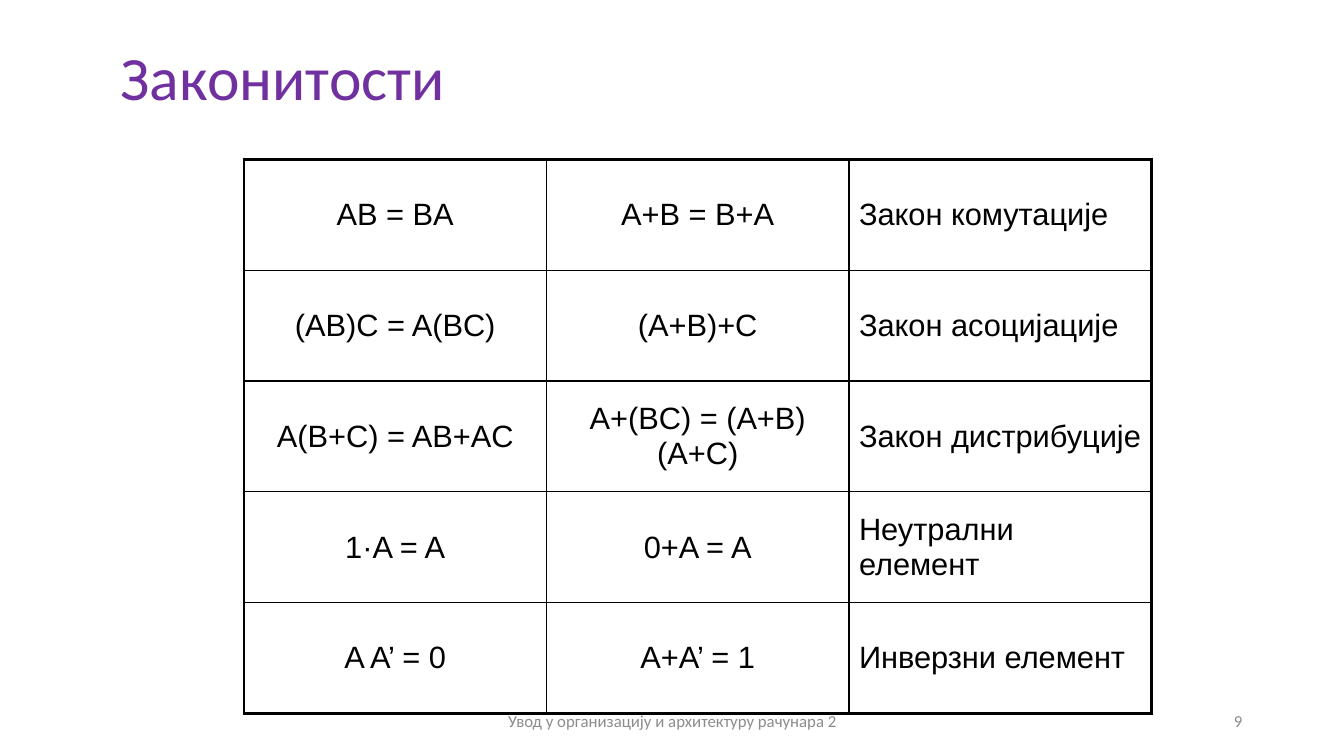
from lxml import etree
from pptx import Presentation
from pptx.dml.color import RGBColor
from pptx.enum.text import MSO_ANCHOR, PP_ALIGN
from pptx.oxml import parse_xml
from pptx.oxml.ns import qn
from pptx.util import Inches, Pt

DRAWING = "http://schemas.openxmlformats.org/drawingml/2006/main"
BLACK, PURPLE, GRAY = "000000", "7030A0", "8C8C8C"
THICK, THIN = 2.25, 1
LAWS = [
    ("AB = BA", "A+B = B+A", "Закон комутације"),
    ("(AB)C = A(BC)", "(A+B)+C", "Закон асоцијације"),
    ("A(B+C) = AB+AC", "A+(BC) = (A+B)(A+C)", "Закон дистрибуције"),
    ("1·A = A", "0+A = A", "Неутрални елемент"),
    ("A A’ = 0", "A+A’ = 1", "Инверзни елемент"),
]


def color(value):
    return RGBColor.from_string(value)


def write(frame, text, size, font="Calibri", fill=BLACK, align=PP_ALIGN.LEFT,
          line_spacing=None, space_before=None):
    frame.word_wrap = True
    para = frame.paragraphs[0]
    para.alignment = align
    para.line_spacing = line_spacing
    para.space_before = space_before
    span = para.add_run()
    span.text = text
    span.font.size = Pt(size)
    span.font.name = font
    span.font.color.rgb = color(fill)
    return span


def add_text(page, left, top, width, height, text, **style):
    box = page.shapes.add_textbox(Inches(left), Inches(top), Inches(width), Inches(height))
    box.text_frame.vertical_anchor = MSO_ANCHOR.MIDDLE
    return write(box.text_frame, text, **style)


def add_text_shadow(span):
    effects = parse_xml(
        f'<a:effectLst xmlns:a="{DRAWING}">'
        '<a:outerShdw blurRad="38100" dist="38100" dir="8100000" algn="tr">'
        '<a:srgbClr val="000000"><a:alpha val="40000"/></a:srgbClr>'
        '</a:outerShdw></a:effectLst>')
    span.font.color.rgb = color(PURPLE)
    fill = span.font._element.find(qn("a:solidFill"))
    fill.addnext(effects)


def set_borders(cell, widths):
    properties = cell._tc.get_or_add_tcPr()
    for index, (side, width) in enumerate(widths.items()):
        line = etree.Element(qn(f"a:ln{side}"), w=str(Pt(width)))
        fill = etree.SubElement(line, qn("a:solidFill"))
        etree.SubElement(fill, qn("a:srgbClr"), val=BLACK)
        properties.insert(index, line)


def add_laws_table(page, left, top, width, height):
    row_count, column_count = len(LAWS), len(LAWS[0])
    table = page.shapes.add_table(row_count, column_count, Inches(left), Inches(top),
                                  Inches(width), Inches(height)).table
    table.first_row = table.horz_banding = False
    for row, law in enumerate(LAWS):
        for column, text in enumerate(law):
            cell = table.cell(row, column)
            cell.fill.background()
            cell.vertical_anchor = MSO_ANCHOR.MIDDLE
            last_column = column == column_count - 1
            write(cell.text_frame, text, size=22, font="Arial", space_before=Pt(4.4),
                  align=PP_ALIGN.LEFT if last_column else PP_ALIGN.CENTER)
            # Thick frame outside, thin lines inside
            set_borders(cell, {
                "L": THICK if column == 0 else THIN,
                "R": THICK if last_column else THIN,
                "T": THICK if row == 0 else THIN,
                "B": THICK if row == row_count - 1 else THIN,
            })


def main():
    deck = Presentation()
    deck.slide_width, deck.slide_height = Inches(13.33), Inches(7.5)
    page = deck.slides.add_slide(deck.slide_layouts[6])

    # Title
    title = add_text(page, 1.1, 0.2, 11.22, 1.2, "Законитости", size=44,
                     fill=PURPLE, line_spacing=0.9)
    add_text_shadow(title)

    # Laws of the algebra
    add_laws_table(page, 2.42, 1.58, 9, 5.5)

    # Page number and footer
    add_text(page, 9.42, 6.95, 3, 0.4, "9", size=12, fill=GRAY, align=PP_ALIGN.RIGHT)
    add_text(page, 4.42, 6.95, 4.5, 0.4, "Увод у организацију и архитектуру рачунара 2",
             size=12, fill=GRAY, align=PP_ALIGN.CENTER)

    deck.save("out.pptx")


if __name__ == "__main__":
    main()
